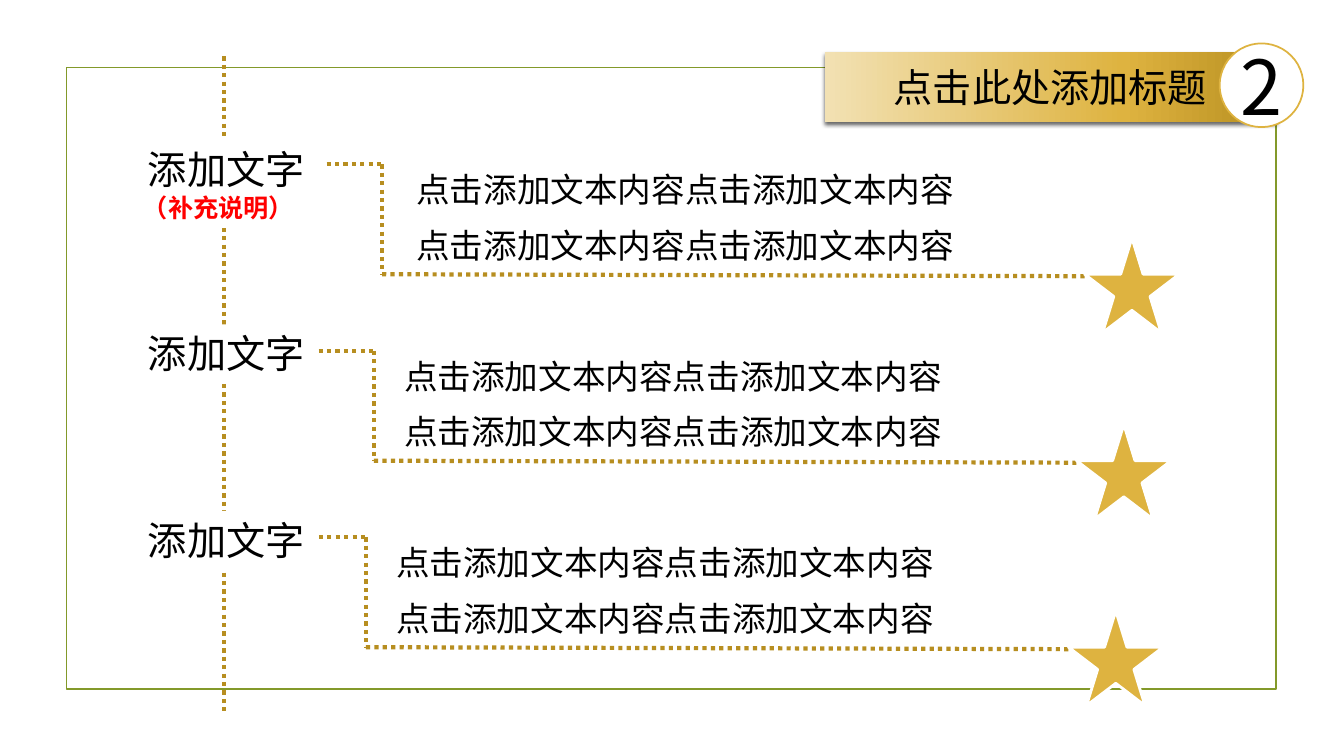
from lxml.etree import SubElement
from pptx import Presentation
from pptx.dml.color import RGBColor
from pptx.enum.dml import MSO_LINE
from pptx.enum.shapes import MSO_CONNECTOR, MSO_SHAPE as Preset
from pptx.enum.text import MSO_ANCHOR, MSO_AUTO_SIZE, PP_ALIGN
from pptx.oxml import parse_xml
from pptx.oxml.ns import nsdecls, qn
from pptx.util import Pt

TITLE, NUMBER = "点击此处添加标题", "2"
NOTE = "（补充说明）"
DETAIL = "点击添加文本内容点击添加文本内容"
SECTIONS = [
    {"label": "添加文字", "label_top": 100, "details": [DETAIL, DETAIL], "details_left": 290.2},
    {"label": "添加文字", "label_top": 231.8, "details": [DETAIL, DETAIL], "details_left": 281.5},
    {"label": "添加文字", "label_top": 365, "details": [DETAIL, DETAIL], "details_left": 275.8},
]
SPINE = [(40.3, 117.4), (162.7, 253.4), (274.3, 365), (409, 508.3)]
COLORS = {"frame": "83992A", "dark_gold": "B78E20", "gold": "DEB340", "pale_gold": "F2E1B3",
          "white": "FFFFFF", "black": "000000", "red": "FF0000"}
BANNER_STOPS = [(0, "dark_gold"), (34, "gold"), (100, "pale_gold")]
SERIF, SANS, DIGIT = "Times New Roman", "Noto Sans CJK SC", "Noto Sans CJK JP"

SPINE_X = 159.8
SECTION_PITCH, SECTION_SHIFT = 133.2, -5.76
BRANCH_LEFT, BRANCH_TOP = 233.3, 117.4
ELBOW, DROP, REACH, SLOPE = 39.6, 78.5, 501.8, 1.4
DETAIL_PITCH = 39.6
STAR_SIZE, STAR_RISE = 67.7, 25.9


def rgb(name):
    return RGBColor.from_string(COLORS[name])


def add_text(frame, text, size, font, color="black", bold=None, align=None):
    paragraph = frame.paragraphs[0]
    paragraph.alignment = align
    run = paragraph.add_run()
    run.text = text
    run.font.size, run.font.bold = Pt(size), bold
    run.font.color.rgb = rgb(color)
    run.font.name = font
    east_asian = SubElement(run.font._element, qn("a:ea"))
    east_asian.set("typeface", SANS if font == SERIF else font)


def add_caption(slide, box, text, size, color="black", bold=None, fill=None):
    caption = slide.shapes.add_textbox(*map(Pt, box))
    if fill:
        caption.fill.solid()
        caption.fill.fore_color.rgb = rgb(fill)
    caption.text_frame.word_wrap = False
    caption.text_frame.auto_size = MSO_AUTO_SIZE.SHAPE_TO_FIT_TEXT
    add_text(caption.text_frame, text, size, SERIF, color, bold)


def add_dots(slide, *ends):
    dots = slide.shapes.add_connector(MSO_CONNECTOR.STRAIGHT, *map(Pt, ends))
    dots.line.color.rgb = rgb("dark_gold")
    dots.line.width = Pt(3)
    dots.line.dash_style = MSO_LINE.ROUND_DOT
    SubElement(dots._element.spPr, qn("a:effectLst"))


def add_figure(slide, preset, box, fill=None, line=None, width=1.25):
    figure = slide.shapes.add_shape(preset, *map(Pt, box))
    figure.shadow.inherit = False
    if fill:
        figure.fill.solid()
        figure.fill.fore_color.rgb = rgb(fill)
    else:
        figure.fill.background()
    if line:
        figure.line.color.rgb = rgb(line)
        figure.line.width = Pt(width)
    else:
        figure.line.fill.background()
    return figure


def add_heading(figure, text, size, font):
    frame = figure.text_frame
    frame.vertical_anchor = MSO_ANCHOR.MIDDLE
    frame.margin_left = frame.margin_right = frame.margin_top = frame.margin_bottom = 0
    add_text(frame, text, size, font, align=PP_ALIGN.CENTER)


def style_banner(banner):
    stops = "".join(f'<a:gs pos="{place * 1000}"><a:srgbClr val="{COLORS[name]}"/></a:gs>'
                    for place, name in BANNER_STOPS)
    properties = banner._element.spPr
    properties.replace(properties.find(qn("a:noFill")), parse_xml(
        f'<a:gradFill {nsdecls("a")} rotWithShape="1"><a:gsLst>{stops}</a:gsLst>'
        '<a:lin ang="10800000" scaled="0"/></a:gradFill>'))
    shadow = SubElement(properties.find(qn("a:effectLst")), qn("a:outerShdw"),
                        blurRad=str(Pt(3)), dist=str(Pt(2)), dir="5400000", rotWithShape="0")
    color = SubElement(shadow, qn("a:srgbClr"), val=COLORS["black"])
    SubElement(color, qn("a:alpha"), val="60000")


def add_branch(slide, index, section):
    left = BRANCH_LEFT + index * SECTION_SHIFT
    top = BRANCH_TOP + index * SECTION_PITCH
    elbow, bottom, tip = left + ELBOW, top + DROP, left + ELBOW + REACH
    add_dots(slide, left, top, elbow, top)
    add_dots(slide, elbow, top, elbow, bottom)
    add_dots(slide, elbow, bottom, tip, bottom + SLOPE)
    for row, detail in enumerate(section["details"]):
        add_caption(slide, (section["details_left"], top + row * DETAIL_PITCH, 402.5, 36),
                    detail, 24)
    add_figure(slide, Preset.STAR_5_POINT, (tip, bottom - STAR_RISE, STAR_SIZE, STAR_SIZE),
               "gold", "white", 2)


def main():
    """Build the slide with three branching sections and save it."""
    deck = Presentation()
    deck.slide_width, deck.slide_height = Pt(960), Pt(540)
    slide = deck.slides.add_slide(deck.slide_layouts[6])

    add_figure(slide, Preset.RECTANGLE, (47.5, 48.2, 864, 444.2), line="frame")
    for start, end in SPINE:
        add_dots(slide, SPINE_X, start, SPINE_X, end)
    for index, section in enumerate(SECTIONS):
        add_branch(slide, index, section)

    banner = add_figure(slide, Preset.RECTANGLE, (589, 37.4, 322.6, 49.7))
    style_banner(banner)
    add_heading(banner, TITLE, 28, SANS)
    badge = add_figure(slide, Preset.OVAL, (871.2, 31, 59.8, 59.8), "white", "gold")
    add_heading(badge, NUMBER, 54, DIGIT)

    for section in SECTIONS:
        add_caption(slide, (98.6, section["label_top"], 127.4, 41), section["label"], 28,
                    fill="white")
    add_caption(slide, (95, 133.9, 124.6, 28.8), NOTE, 18, "red", True, "white")
    deck.save("out.pptx")


if __name__ == "__main__":
    main()
